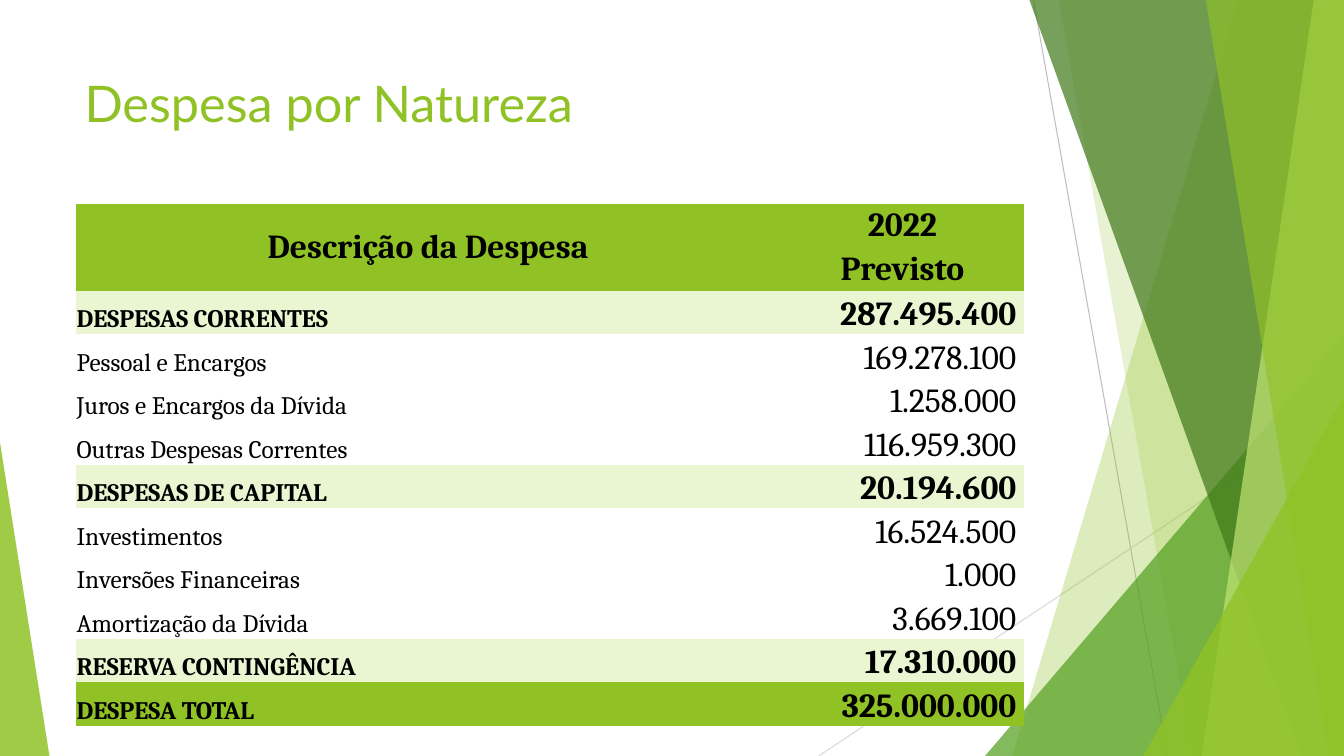
"""Build the slide with the planned expenses by nature for 2022."""
from dataclasses import dataclass

import pptx
import pptx.dml.color
import pptx.enum.shapes
import pptx.enum.text
import pptx.oxml.ns
import pptx.oxml.xmlchemy
import pptx.util

Inches = pptx.util.Inches
RGBColor = pptx.dml.color.RGBColor
Align = pptx.enum.text.PP_ALIGN
Anchor = pptx.enum.text.MSO_ANCHOR

WIDTH, HEIGHT = 13.33, 7.5
LIME = RGBColor(0x90, 0xC2, 0x26)
GREEN = RGBColor(0x54, 0xA0, 0x21)
FOREST = RGBColor(0x3F, 0x78, 0x19)
PALE_LIME = RGBColor(0xC0, 0xE4, 0x74)
MIST = RGBColor(0xEA, 0xF6, 0xD1)
BLACK = RGBColor(0, 0, 0)
GRAY = RGBColor(0xBF, 0xBF, 0xBF)
LIGHT_GRAY = RGBColor(0xD9, 0xD9, 0xD9)
NO_STYLE = "{2D5ABB26-0587-4C30-8999-92F81FD0307C}"


@dataclass
class Ray:
    start: tuple[float, float]
    end: tuple[float, float]
    color: RGBColor


@dataclass
class Ribbon:
    """Band from the slide's top to its bottom, reaching the right edge."""
    top_left: float
    bottom_left: float
    color: RGBColor
    opacity: int


@dataclass
class Wedge:
    """Triangle standing on the slide's bottom edge."""
    left: float
    top: float
    width: float
    apex: float
    color: RGBColor
    opacity: int


@dataclass
class Expense:
    label: str
    amount: str
    fill: RGBColor | None = None


RAYS = [
    Ray((10.25, 0), (11.58, HEIGHT), GRAY),
    Ray((WIDTH, 4.03), (8.12, HEIGHT), LIGHT_GRAY),
]
FACETS = [
    Ribbon(12.28, 10.04, LIME, 30),
    Ribbon(10.5, 11.83, LIME, 20),
    Wedge(9.77, 3.33, 3.56, 1, GREEN, 72),
    Ribbon(10.21, 12.91, FOREST, 70),
    Ribbon(13.03, 11.92, PALE_LIME, 70),
    Ribbon(11.96, 13.18, LIME, 65),
    Wedge(11.34, 3.93, 1.99, 1, LIME, 80),
    Wedge(0, 4.39, 0.49, 0, LIME, 85),
]
EXPENSES = [
    Expense("DESPESAS CORRENTES", "287.495.400", MIST),
    Expense("Pessoal e Encargos", "169.278.100"),
    Expense("Juros e Encargos da Dívida", "1.258.000"),
    Expense("Outras Despesas Correntes", "116.959.300"),
    Expense("DESPESAS DE CAPITAL", "20.194.600", MIST),
    Expense("Investimentos", "16.524.500"),
    Expense("Inversões Financeiras", "1.000"),
    Expense("Amortização da Dívida", "3.669.100"),
    Expense("RESERVA CONTINGÊNCIA", "17.310.000", MIST),
    Expense("DESPESA TOTAL", "325.000.000", LIME),
]


def draw_ray(page, ray: Ray) -> None:
    """Draw one thin background line."""
    line = page.shapes.add_connector(
        pptx.enum.shapes.MSO_CONNECTOR.STRAIGHT,
        *map(Inches, ray.start + ray.end))
    line.line.color.rgb = ray.color
    line.line.width = pptx.util.Pt(0.75)
    line.element.spPr.append(pptx.oxml.xmlchemy.OxmlElement("a:effectLst"))


def draw_facet(page, facet: Ribbon | Wedge) -> None:
    """Draw one translucent background facet."""
    if isinstance(facet, Ribbon):
        builder = page.shapes.build_freeform(Inches(facet.top_left), 0)
        corners = [(WIDTH, 0), (WIDTH, HEIGHT), (facet.bottom_left, HEIGHT)]
        builder.add_line_segments([(Inches(x), Inches(y)) for x, y in corners])
        shape = builder.convert_to_shape()
    else:
        shape = page.shapes.add_shape(
            pptx.enum.shapes.MSO_SHAPE.ISOSCELES_TRIANGLE,
            Inches(facet.left), Inches(facet.top),
            Inches(facet.width), Inches(HEIGHT - facet.top))
        shape.adjustments[0] = facet.apex
    shape.shadow.inherit = False
    shape.line.fill.background()
    shape.fill.solid()
    shape.fill.fore_color.rgb = facet.color
    alpha = pptx.oxml.xmlchemy.OxmlElement("a:alpha")
    alpha.set("val", str(facet.opacity * 1000))
    color = shape.element.spPr.find(".//" + pptx.oxml.ns.qn("a:srgbClr"))
    color.append(alpha)


def add_span(para, text: str, font: str, size: int, color: RGBColor,
             bold: bool = False) -> None:
    """Add one formatted run to a paragraph."""
    span = para.add_run()
    span.text = text
    span.font.name = font
    span.font.size = pptx.util.Pt(size)
    span.font.color.rgb = color
    span.font.bold = bold


def draw_title(page) -> None:
    """Draw the slide heading."""
    box = page.shapes.add_textbox(
        Inches(0.74), Inches(0.67), Inches(9.4), Inches(1.44))
    box.text_frame.word_wrap = True
    add_span(box.text_frame.paragraphs[0], "Despesa por Natureza",
             "Lato", 36, LIME)


def fill_cell(cell, text: str, size: int, align: Align, anchor: Anchor,
              fill: RGBColor | None, right: float = 0.01) -> None:
    """Write and format one table cell; filled cells are bold."""
    cell.margin_left = cell.margin_top = Inches(0.01)
    cell.margin_right, cell.margin_bottom = Inches(right), 0
    cell.vertical_anchor = anchor
    if fill is None:
        cell.fill.background()
    else:
        cell.fill.solid()
        cell.fill.fore_color.rgb = fill
    para = cell.text_frame.paragraphs[0]
    para.alignment = align
    add_span(para, text, "Cambria", size, BLACK, fill is not None)


def draw_table(page) -> None:
    """Draw the expense table below its two-row heading."""
    row_count = len(EXPENSES) + 2
    frame = page.shapes.add_table(
        row_count, 2, Inches(0.75), Inches(2.02), Inches(9.4), Inches(5.18))
    table = frame.table
    table.first_row = table.horz_banding = False
    style = frame.element.find(".//" + pptx.oxml.ns.qn("a:tableStyleId"))
    style.text = NO_STYLE
    for column, width in zip(table.columns, (6.99, 2.42)):
        column.width = Inches(width)
    table.cell(0, 0).merge(table.cell(1, 0))
    headings = [(0, 0, "Descrição da Despesa"), (0, 1, "2022"),
                (1, 1, "Previsto")]
    for row, column, text in headings:
        fill_cell(table.cell(row, column), text, 24, Align.CENTER,
                  Anchor.MIDDLE, LIME)
    for row, expense in enumerate(EXPENSES, start=2):
        fill_cell(table.cell(row, 0), expense.label, 18, Align.LEFT,
                  Anchor.BOTTOM, expense.fill)
        fill_cell(table.cell(row, 1), expense.amount, 24, Align.RIGHT,
                  Anchor.BOTTOM, expense.fill, right=0.08)


def main() -> None:
    """Assemble and save the deck."""
    deck = pptx.Presentation()
    deck.slide_width, deck.slide_height = Inches(WIDTH), Inches(HEIGHT)
    page = deck.slides.add_slide(deck.slide_layouts[6])
    for ray in RAYS:
        draw_ray(page, ray)
    for facet in FACETS:
        draw_facet(page, facet)
    draw_title(page)
    draw_table(page)
    deck.save("out.pptx")


if __name__ == "__main__":
    main()
